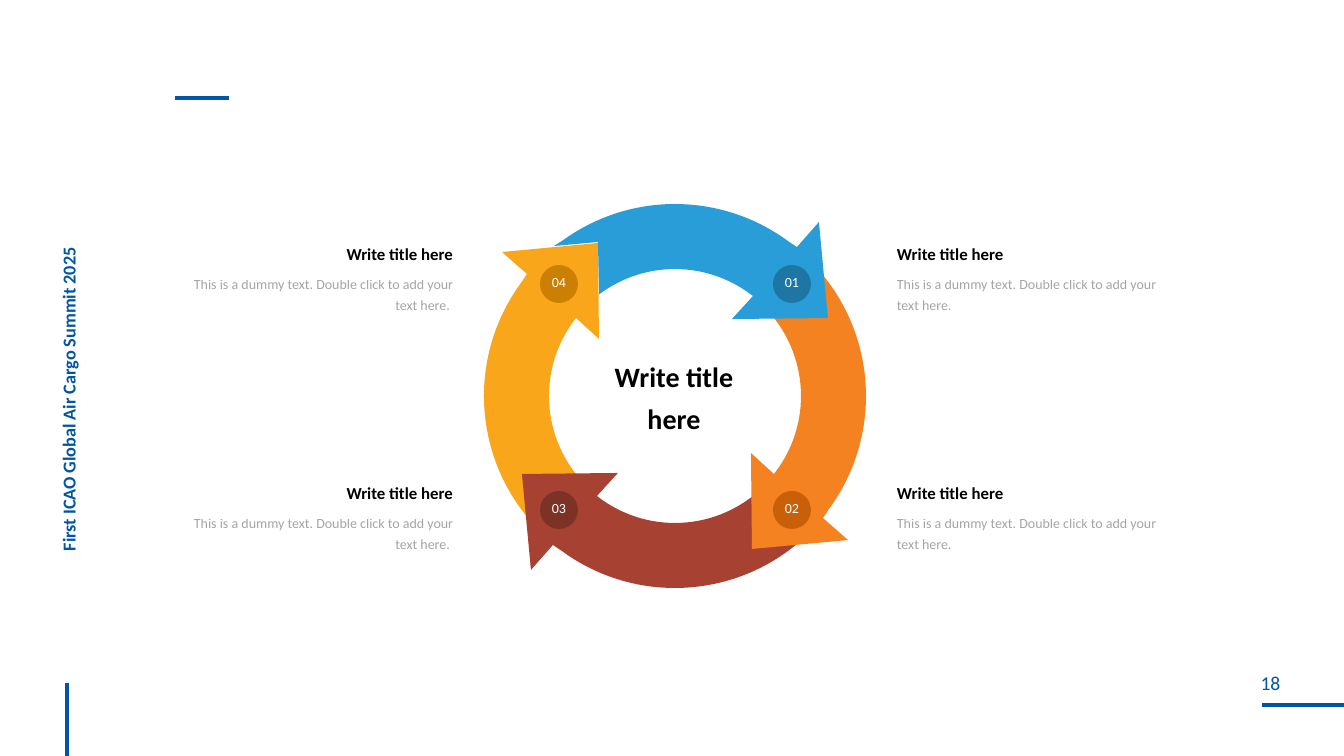
from math import cos, radians, sin, tan

from pptx import Presentation
from pptx.dml.color import RGBColor as RGB
from pptx.enum.shapes import MSO_CONNECTOR as CONN, MSO_SHAPE as SHAPE
from pptx.enum.text import MSO_ANCHOR as ANCHOR, MSO_AUTO_SIZE as AUTO, PP_ALIGN as ALIGN
from pptx.oxml.ns import qn
from pptx.util import Emu, Pt
from lxml.etree import SubElement

PX = 914400 / 100.8
FONT = "Calibri"

NAVY = RGB(0x00, 0x55, 0xA5)
BLACK = RGB(0x00, 0x00, 0x00)
WHITE = RGB(0xFF, 0xFF, 0xFF)
GRAY = RGB(0x80, 0x80, 0x80)
YELLOW, DARK_YELLOW = RGB(0xFA, 0xA6, 0x1A), RGB(0xCB, 0x80, 0x04)
RED, DARK_RED = RGB(0xA7, 0x42, 0x33), RGB(0x7D, 0x32, 0x26)
ORANGE, DARK_ORANGE = RGB(0xF5, 0x82, 0x20), RGB(0xC7, 0x60, 0x09)
BLUE, DARK_BLUE = RGB(0x28, 0x9D, 0xD8), RGB(0x1D, 0x76, 0xA3)

NO_INSET = dict(margin_left=0, margin_top=0, margin_right=0, margin_bottom=0)
BODY = "This is a dummy text. Double click to add your text here."

# Ring geometry, relative to its centre; angles run clockwise from the right
CENTER_X = 675
OUTER, INNER = 191, 126
TILT = 48
HEAD = [(148, 122), (173, 144), (77, 153), (76, 57), (99, 78)]


def emu(px):
    return Emu(round(px * PX))


def rotate(x, y, degrees):
    c, s = cos(radians(degrees)), sin(radians(degrees))
    return x * c - y * s, x * s + y * c


def arc(radius, start, end):
    """Start, two control points and end of one cubic curve, as a tuple."""
    k = radius * 4 / 3 * tan(radians(end - start) / 4)
    return (rotate(radius, 0, start), rotate(radius, k, start),
            rotate(radius, -k, end), rotate(radius, 0, end))


FULL_ARROW = [arc(OUTER, -48, 36.5), HEAD, arc(INNER, 37, -48)]
CUT_ARROW = [arc(OUTER, -3, 36.5), HEAD, arc(INNER, 37, -37),
             [(153, -77), (149, -121)], arc(OUTER, -36, -3)]


class Deck:
    def __init__(self, width, height):
        self.prs = Presentation()
        self.prs.slide_width, self.prs.slide_height = emu(width), emu(height)
        self.shapes = self.prs.slides.add_slide(self.prs.slide_layouts[6]).shapes

    def paragraph(self, tf, index, text, size, color, bold=False, alpha=None, **fmt):
        p = tf.add_paragraph() if index else tf.paragraphs[0]
        for name, value in fmt.items():
            setattr(p, name, value)
        r = p.add_run()
        r.text = text
        for name, value in dict(name=FONT, size=Pt(size), bold=bold).items():
            setattr(r.font, name, value)
        r.font.color.rgb = color
        if alpha:
            srgb = r.font.fill._xPr.find(f".//{qn('a:srgbClr')}")
            SubElement(srgb, qn("a:alpha")).set("val", str(alpha * 1000))

    def text(self, x, y, w, h, lines, rotation=0, **frame):
        sp = self.shapes.add_textbox(*map(emu, (x, y, w, h)))
        sp.rotation = rotation
        for name, value in {"word_wrap": True, **frame}.items():
            setattr(sp.text_frame, name, value)
        for i, line in enumerate(lines):
            self.paragraph(sp.text_frame, i, **line)

    def line(self, x1, y1, x2, y2):
        c = self.shapes.add_connector(CONN.STRAIGHT, *map(emu, (x1, y1, x2, y2)))
        c.line.color.rgb, c.line.width = NAVY, Pt(3)
        SubElement(c._element.spPr, qn("a:effectLst"))

    def paint(self, sp, color):
        sp.shadow.inherit = False
        sp.fill.solid()
        sp.fill.fore_color.rgb = color
        sp.line.fill.background()

    def arrow(self, color, turn, center_y, outline):
        cx, cy = emu(CENTER_X), emu(center_y)
        points, curves = [], []
        for part in outline:
            if isinstance(part, tuple):
                curves.append(len(points))
            for x, y in part:
                dx, dy = rotate(x, y, turn + TILT)
                points.append((cx + emu(dx), cy + emu(dy)))
        builder = self.shapes.build_freeform(*points[0])
        builder.add_line_segments(points[1:], close=True)
        sp = builder.convert_to_shape()

        # Each arc's three line segments become one curve
        segments = list(sp._element.iter(qn("a:lnTo")))
        for i in curves:
            curve = segments[i].makeelement(qn("a:cubicBezTo"))
            segments[i].addprevious(curve)
            for segment in segments[i:i + 3]:
                curve.append(segment[0])
                segment.getparent().remove(segment)

        # Tilt the shape around the ring's centre
        half_w, half_h = sp.width / 2, sp.height / 2
        dx, dy = rotate(sp.left + half_w - cx, sp.top + half_h - cy, -TILT)
        sp.left, sp.top = Emu(round(cx + dx - half_w)), Emu(round(cy + dy - half_h))
        sp.rotation = 360 - TILT
        self.paint(sp, color)

    def badge(self, x, y, label, color):
        sp = self.shapes.add_shape(SHAPE.OVAL, *map(emu, (x, y, 38, 38)))
        self.paint(sp, color)
        for name, value in dict(NO_INSET, vertical_anchor=ANCHOR.MIDDLE).items():
            setattr(sp.text_frame, name, value)
        self.paragraph(sp.text_frame, 0, label, 10, WHITE,
                       alignment=ALIGN.CENTER, line_spacing=0.8)

    def caption(self, x, y, align, body):
        fmt = dict(alignment=align, line_spacing=1.2)
        self.text(x, y, 262, 84, [
            dict(text="Write title here", size=12, color=BLACK, bold=True, **fmt),
            dict(text=body, size=10, color=GRAY, alpha=70, space_before=Pt(6), **fmt),
        ], margin_left=0, margin_right=0, auto_size=AUTO.SHAPE_TO_FIT_TEXT)


def main():
    deck = Deck(1344, 756)

    # Frame: page number, event name and accent lines
    deck.line(1262, 705, 1344, 705)
    deck.text(1210, 671, 121, 33,
              [dict(text="18", size=14, color=NAVY, alignment=ALIGN.CENTER)],
              **{**NO_INSET, "word_wrap": False})
    deck.line(67, 683, 67, 756)
    deck.text(-188, 286, 518, 32,
              [dict(text="First ICAO Global Air Cargo Summit 2025", size=13,
                    color=NAVY, bold=True, line_spacing=0.9)], rotation=270)
    deck.line(175, 98, 229, 98)

    # Captions on both sides of the ring
    for x, align, body in ((897, ALIGN.LEFT, BODY), (191, ALIGN.RIGHT, BODY + " ")):
        for y in (235, 474):
            deck.caption(x, y, align, body)

    # Ring of arrows; the blue tail is cut to sit behind the yellow head
    for color, turn, center_y, outline in ((YELLOW, 180, 396, FULL_ARROW),
                                           (RED, 90, 397, FULL_ARROW),
                                           (ORANGE, 0, 396, FULL_ARROW),
                                           (BLUE, -90, 395, CUT_ARROW)):
        deck.arrow(color, turn, center_y, outline)

    # Number badges on the arrow heads
    for x, y, label, color in ((773, 265, "01", DARK_BLUE), (773, 491, "02", DARK_ORANGE),
                               (540, 265, "04", DARK_YELLOW), (540, 491, "03", DARK_RED)):
        deck.badge(x, y, label, color)

    # Title in the middle of the ring
    title = dict(size=20, color=BLACK, bold=True, alignment=ALIGN.CENTER)
    deck.text(598, 355, 152, 87,
              [dict(text="Write title", **title),
               dict(text="here", space_before=Pt(6), **title)],
              word_wrap=False, auto_size=AUTO.SHAPE_TO_FIT_TEXT)

    deck.prs.save("out.pptx")


if __name__ == "__main__":
    main()
